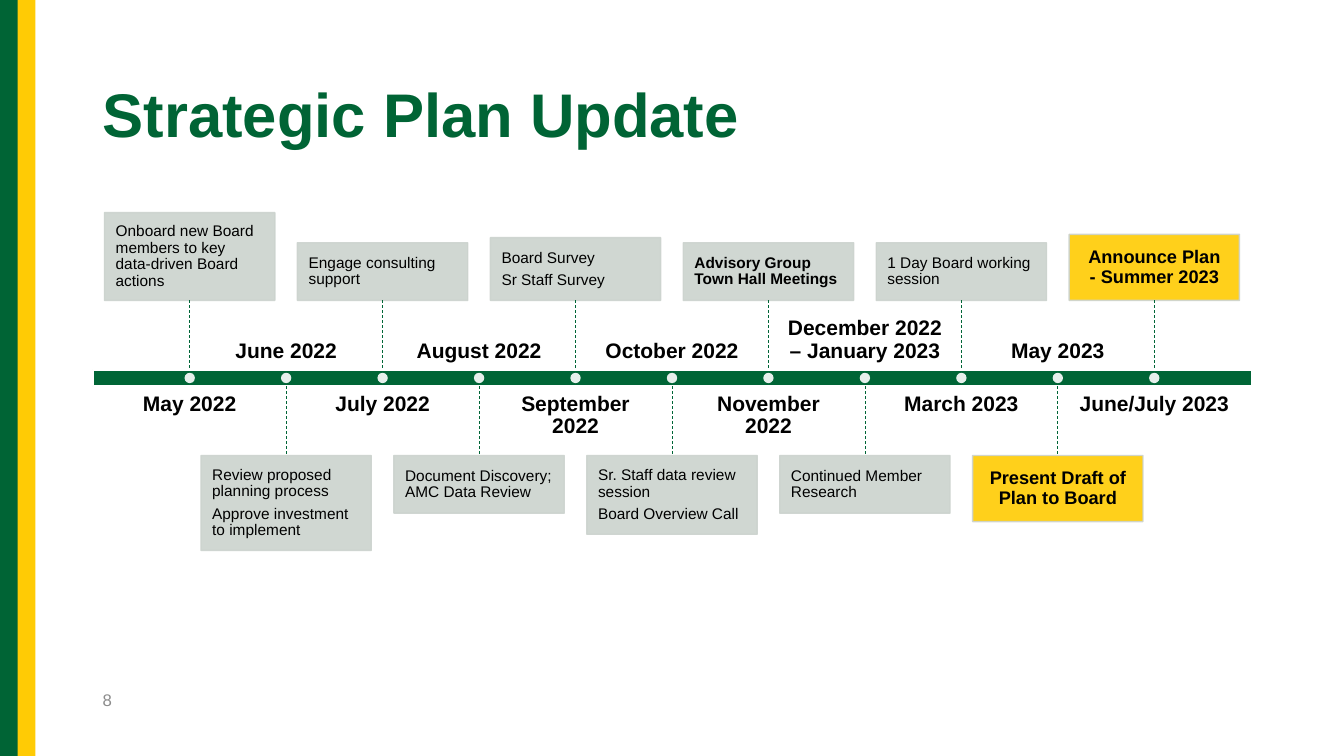
from dataclasses import dataclass

import pptx
import pptx.dml.color
import pptx.enum.dml
import pptx.enum.shapes
import pptx.enum.text
import pptx.oxml
import pptx.oxml.ns
import pptx.util

Pt = pptx.util.Pt
Anchor = pptx.enum.text.MSO_ANCHOR
Align = pptx.enum.text.PP_ALIGN
Preset = pptx.enum.shapes.MSO_SHAPE

FONT = "Arial"
COLORS = {
    "green": "006435",
    "gold": "FFCB05",
    "axis": "006536",
    "card": "CBD3CE",
    "card_edge": "CCD3CE",
    "highlight": "FFCB03",
    "white": "FFFFFF",
    "text": "000000",
    "page_number": "8C8C8C",
}

AXIS_LEFT, AXIS_WIDTH = 66.2, 828
AXIS_TOP, AXIS_HEIGHT = 264.2, 11.6
FIRST_CENTER, STEP = 135.5, 68.9
CONNECTOR_LENGTH = 49.6
CARD_WIDTH = 121.7
LABEL_WIDTH, LABEL_HEIGHT, LABEL_GAP = 110.2, 33.1, 5
DOT_SIZE = 7.4


@dataclass
class Milestone:
    month: str
    tasks: list[str]
    card_height: float
    bold: bool = False
    highlight: bool = False


MILESTONES = [
    Milestone("May 2022", ["Onboard new Board members to key data-driven Board actions"], 62.7),
    Milestone("June 2022", ["Review proposed planning process", "Approve investment to implement"], 67.8),
    Milestone("July 2022", ["Engage consulting support"], 41.2),
    Milestone("August 2022", ["Document Discovery; AMC Data Review"], 41.2),
    Milestone("September 2022", ["Board Survey", "Sr Staff Survey"], 44.8),
    Milestone("October 2022", ["Sr. Staff data review session", "Board Overview Call"], 56.3),
    Milestone("November 2022", ["Advisory Group Town Hall Meetings"], 41.2, bold=True),
    Milestone("December 2022 – January 2023", ["Continued Member Research"], 41.2),
    Milestone("March 2023", ["1 Day Board working session"], 41.2),
    Milestone("May 2023", ["Present Draft of Plan to Board"], 47.2, bold=True, highlight=True),
    Milestone("June/July 2023", ["Announce Plan - Summer 2023"], 47.2, bold=True, highlight=True),
]


def rgb(name: str) -> pptx.dml.color.RGBColor:
    return pptx.dml.color.RGBColor.from_string(COLORS[name])


def set_opacity(fill_parent, percent: int) -> None:
    """Make the solid fill directly below the given XML element translucent."""
    color = fill_parent.find(pptx.oxml.ns.qn("a:solidFill"))[0]
    alpha = pptx.oxml.parse_xml(
        f'<a:alpha {pptx.oxml.ns.nsdecls("a")} val="{percent * 1000}"/>')
    color.append(alpha)


def add_block(slide, preset, left: float, top: float, width: float, height: float,
              fill: str, edge: str = "", edge_width: float = 1, opacity: int = 100):
    block = slide.shapes.add_shape(preset, Pt(left), Pt(top), Pt(width), Pt(height))
    block.shadow.inherit = False
    block.fill.solid()
    block.fill.fore_color.rgb = rgb(fill)
    if edge:
        block.line.color.rgb = rgb(edge)
        block.line.width = Pt(edge_width)
    else:
        block.line.fill.background()
    if opacity < 100:
        set_opacity(block.element.spPr, opacity)
        if edge:
            set_opacity(block.element.spPr.ln, opacity)
    return block


def write(frame, paragraphs: list[str], size: float, color: str = "text", bold: bool = False,
          align=Align.LEFT, anchor=Anchor.MIDDLE, inset: float = 0,
          space_after: float = 0) -> None:
    frame.word_wrap = True
    frame.auto_size = pptx.enum.text.MSO_AUTO_SIZE.NONE
    frame.vertical_anchor = anchor
    frame.margin_left = frame.margin_right = Pt(inset)
    frame.margin_top = frame.margin_bottom = Pt(inset)
    frame.text = "\n".join(paragraphs)
    for paragraph in frame.paragraphs:
        paragraph.alignment = align
        paragraph.line_spacing = 0.9
        paragraph.space_after = Pt(space_after)
        for run in paragraph.runs:
            run.font.name = FONT
            run.font.size = Pt(size)
            run.font.bold = bold
            run.font.color.rgb = rgb(color)


def add_dashed_line(slide, x: float, top: float, bottom: float) -> None:
    dashes = slide.shapes.add_connector(
        pptx.enum.shapes.MSO_CONNECTOR.STRAIGHT, Pt(x), Pt(top), Pt(x), Pt(bottom))
    dashes.line.color.rgb = rgb("axis")
    dashes.line.width = Pt(0.5)
    dashes.line.dash_style = pptx.enum.dml.MSO_LINE.DASH
    dashes.element.spPr.append(
        pptx.oxml.parse_xml(f'<a:effectLst {pptx.oxml.ns.nsdecls("a")}/>'))


def add_milestone(slide, milestone: Milestone, center: float, card_above: bool) -> None:
    """Place the card on one side of the axis and the month on the other."""
    axis_bottom = AXIS_TOP + AXIS_HEIGHT
    if card_above:
        line_top, line_bottom = AXIS_TOP - CONNECTOR_LENGTH, AXIS_TOP
        card_top = line_top - milestone.card_height
        label_top, label_anchor = axis_bottom + LABEL_GAP, Anchor.TOP
    else:
        line_top, line_bottom = axis_bottom, axis_bottom + CONNECTOR_LENGTH
        card_top = line_bottom
        label_top, label_anchor = AXIS_TOP - LABEL_GAP - LABEL_HEIGHT, Anchor.BOTTOM

    month = slide.shapes.add_textbox(
        Pt(center - LABEL_WIDTH / 2), Pt(label_top), Pt(LABEL_WIDTH), Pt(LABEL_HEIGHT))
    write(month.text_frame, [milestone.month], 15, bold=True, align=Align.CENTER,
          anchor=label_anchor, space_after=5.25)

    card = add_block(slide, Preset.RECTANGLE, center - CARD_WIDTH / 2, card_top,
                     CARD_WIDTH, milestone.card_height,
                     "highlight" if milestone.highlight else "card", "card_edge", opacity=90)
    write(card.text_frame, milestone.tasks, 13 if milestone.highlight else 11,
          bold=milestone.bold, align=Align.CENTER if milestone.highlight else Align.LEFT,
          inset=10 if milestone.highlight else 8, space_after=3.85)

    add_dashed_line(slide, center, line_top, line_bottom)
    add_block(slide, Preset.OVAL, center - DOT_SIZE / 2,
              AXIS_TOP + (AXIS_HEIGHT - DOT_SIZE) / 2, DOT_SIZE, DOT_SIZE, "white", opacity=90)


def main() -> None:
    deck = pptx.Presentation()
    deck.slide_width, deck.slide_height = Pt(960), Pt(540)
    slide = deck.slides.add_slide(deck.slide_layouts[5])

    add_block(slide, Preset.RECTANGLE, 0, 0, 15, 540, "green")
    add_block(slide, Preset.RECTANGLE, 12.6, 0, 12.6, 540, "gold")

    title = slide.shapes.title
    title.left, title.top, title.width, title.height = Pt(66.2), Pt(31.7), Pt(828), Pt(104.4)
    write(title.text_frame, ["Strategic Plan Update"], 44, "green", bold=True, inset=7.2)

    page_number = slide.shapes.add_textbox(Pt(66.2), Pt(486.7), Pt(216), Pt(28.8))
    write(page_number.text_frame, ["8"], 12, "page_number", inset=7.2, space_after=6)

    add_block(slide, Preset.RECTANGLE, AXIS_LEFT, AXIS_TOP, AXIS_WIDTH, AXIS_HEIGHT,
              "axis", "white", 1.5)
    for position, milestone in enumerate(MILESTONES):
        add_milestone(slide, milestone, FIRST_CENTER + position * STEP, position % 2 == 0)

    deck.save("out.pptx")


if __name__ == "__main__":
    main()
